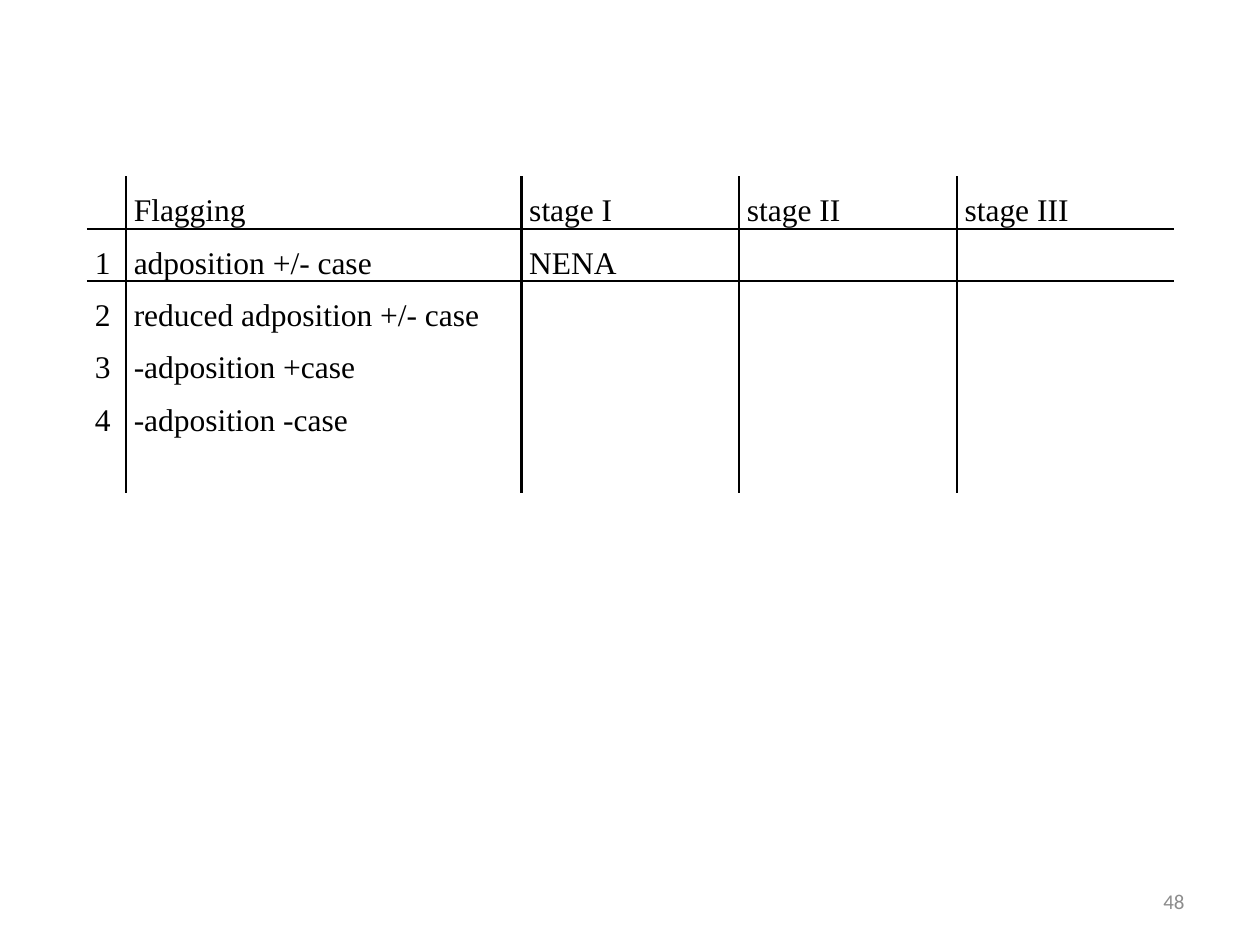
from dataclasses import dataclass

from lxml import etree
from pptx import Presentation
from pptx.dml.color import RGBColor
from pptx.enum.text import MSO_ANCHOR, PP_ALIGN
from pptx.oxml.ns import qn
from pptx.util import Pt

JUSTIFY, RIGHT = PP_ALIGN.JUSTIFY, PP_ALIGN.RIGHT
MIDDLE = MSO_ANCHOR.MIDDLE
BLANK_LAYOUT = 6
NO_STYLE_NO_GRID = "{2D5ABB26-0587-4C30-8999-92F81FD0307C}"

STAGES = [
    ("", "Flagging", "stage I", "stage II", "stage III"),
    ("1", "adposition +/- case", "NENA", "", ""),
    ("2", "reduced adposition +/- case", "", "", ""),
    ("3", "-adposition +case", "", "", ""),
    ("4", "-adposition -case", "", "", ""),
]
PAGE_NUMBER = "48"

COLUMN_WIDTHS = [22.3, 226] + [124.4] * 3
ROW_HEIGHTS = [28.8] * 4 + [61.2]
COLUMN_RULES = [1.5, 1.5, 1, 1]  # between neighbouring columns
HEADER_RULE = 1.5


@dataclass(frozen=True)
class Theme:
    table_font: str = "Times New Roman"
    table_size: float = 18
    ink: str = "000000"
    number_font: str = "Calibri"
    number_size: float = 12
    number_ink: str = "8C8C8C"


THEME = Theme()


def style(paragraph, font, size, color, alignment):
    paragraph.alignment = alignment
    paragraph.font.name = font
    paragraph.font.size = Pt(size)
    paragraph.font.color.rgb = RGBColor.from_string(color)


def add_border(cell, side, width):
    properties = cell._tc.get_or_add_tcPr()
    line = etree.SubElement(properties, qn(f"a:ln{side}"), w=str(Pt(width)))
    fill = etree.SubElement(line, qn("a:solidFill"))
    etree.SubElement(fill, qn("a:srgbClr"), val=THEME.ink)


def add_cell_borders(cell, row, column):
    """Add the borders in schema order: left, right, top, bottom."""
    if column > 0:
        add_border(cell, "L", COLUMN_RULES[column - 1])
    if column < len(COLUMN_RULES):
        add_border(cell, "R", COLUMN_RULES[column])
    if row == 1:
        add_border(cell, "T", HEADER_RULE)
    if row == 0:
        add_border(cell, "B", HEADER_RULE)


def fill_cell(cell, text):
    cell.margin_left = cell.margin_right = Pt(4.5)
    cell.margin_top = cell.margin_bottom = 0
    cell.fill.background()
    cell.text = text
    paragraph = cell.text_frame.paragraphs[0]
    paragraph.line_spacing = 1.5
    style(paragraph, THEME.table_font, THEME.table_size, THEME.ink, JUSTIFY)


def add_stage_table(slide):
    frame = slide.shapes.add_table(
        len(STAGES), len(COLUMN_WIDTHS), Pt(49.7), Pt(100.8),
        Pt(sum(COLUMN_WIDTHS)), Pt(sum(ROW_HEIGHTS)))
    table = frame.table
    table.first_row = table.horz_banding = False
    table._tbl.tblPr.find(qn("a:tableStyleId")).text = NO_STYLE_NO_GRID
    for column, width in zip(table.columns, COLUMN_WIDTHS):
        column.width = Pt(width)
    for row, height in zip(table.rows, ROW_HEIGHTS):
        row.height = Pt(height)
    for r, texts in enumerate(STAGES):
        for c, text in enumerate(texts):
            cell = table.cell(r, c)
            add_cell_borders(cell, r, c)
            fill_cell(cell, text)


def add_page_number(slide):
    box = slide.shapes.add_textbox(Pt(516), Pt(500.5), Pt(168), Pt(28.8))
    frame = box.text_frame
    frame.word_wrap = True
    frame.vertical_anchor = MIDDLE
    frame.text = PAGE_NUMBER
    style(frame.paragraphs[0], THEME.number_font, THEME.number_size,
          THEME.number_ink, RIGHT)


def main():
    deck = Presentation()
    deck.slide_width, deck.slide_height = Pt(720), Pt(540)
    slide = deck.slides.add_slide(deck.slide_layouts[BLANK_LAYOUT])
    add_stage_table(slide)
    add_page_number(slide)
    deck.save("out.pptx")


if __name__ == "__main__":
    main()
